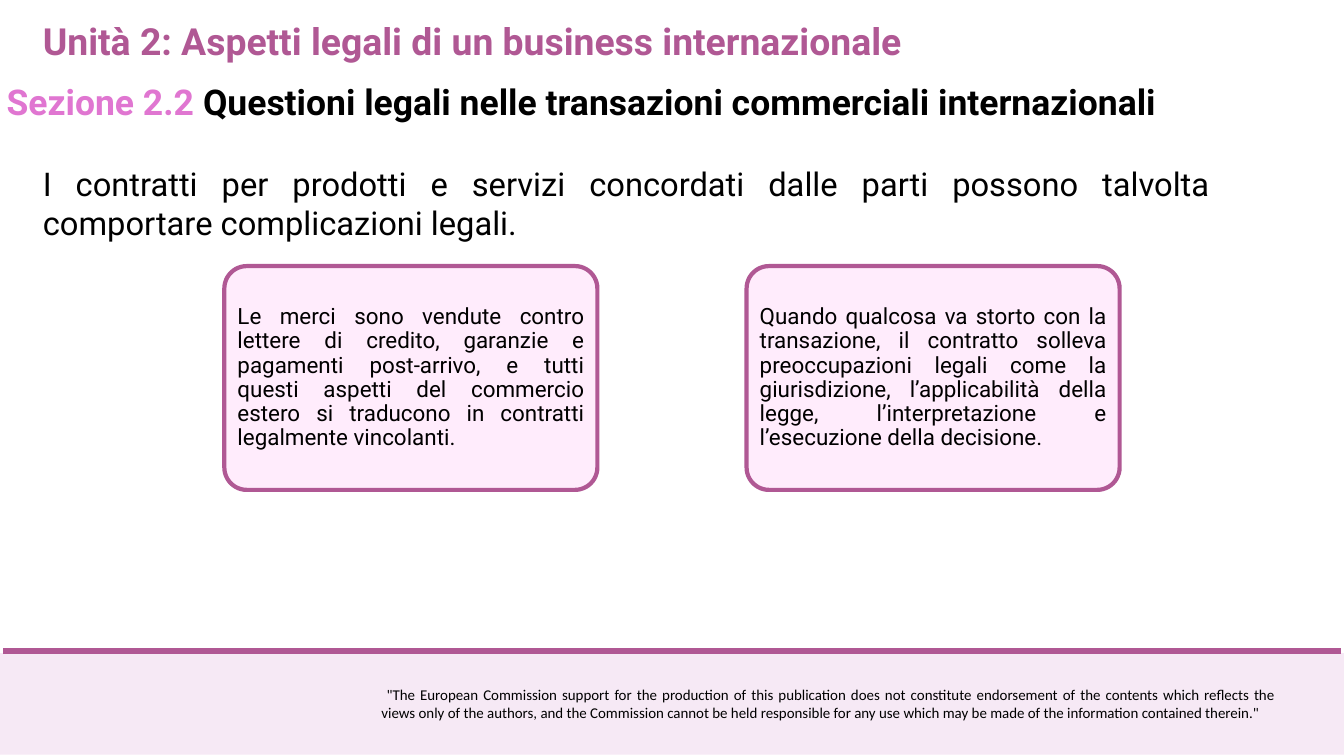
from lxml import etree
from pptx import Presentation
from pptx import util as u
from pptx.dml.color import RGBColor
from pptx.enum import shapes, text
from pptx.oxml.ns import qn

PURPLE, PINK, BLACK = "B05894", "E076D1", "000000"
BAND, CARD = "F6E9F5", "FFECFC"
JUSTIFY = text.PP_ALIGN.JUSTIFY

TITLE = "Unità 2: Aspetti legali di un business internazionale"
SECTION = [("Sezione 2.2 ", PINK),
           ("Questioni legali nelle transazioni commerciali internazionali", BLACK)]
INTRO = ("I contratti per prodotti e servizi concordati dalle parti possono "
         "talvolta comportare complicazioni legali.")
CARDS = [
    "Le merci sono vendute contro lettere di credito, garanzie e pagamenti "
    "post-arrivo, e tutti questi aspetti del commercio estero si traducono in "
    "contratti legalmente vincolanti.",
    "Quando qualcosa va storto con la transazione, il contratto solleva "
    "preoccupazioni legali come la giurisdizione, l’applicabilità della legge, "
    "l’interpretazione e l’esecuzione della decisione.",
]
DISCLAIMER = (
    " \"The European Commission support for the production of this publication "
    "does not constitute endorsement of the contents which reflects the views "
    "only of the authors, and the Commission cannot be held responsible for any "
    "use which may be made of the information contained therein.\"")


def rgb(value):
    return RGBColor.from_string(value)


def add_block(slide, preset, box, fill, line=None, width=0):
    """Add a filled preset shape, with an outline only if a line colour is given."""
    block = slide.shapes.add_shape(preset, *map(u.Cm, box))
    block.shadow.inherit = False
    block.fill.solid()
    block.fill.fore_color.rgb = rgb(fill)
    if line:
        block.line.color.rgb = rgb(line)
        block.line.width = u.Pt(width)
    else:
        block.line.fill.background()
    return block


def write(paragraph, runs, size, font="Roboto", bold=False, align=None):
    """Fill a paragraph with (wording, colour) runs that share one font."""
    for wording, color in runs:
        run = paragraph.add_run()
        run.text = wording
        run.font.color.rgb = rgb(color)
    paragraph.font.size = u.Pt(size)
    paragraph.font.name = font
    paragraph.font.bold = bold
    paragraph.alignment = align


def add_text(slide, box, runs, size, **style):
    frame = slide.shapes.add_textbox(*map(u.Cm, box)).text_frame
    frame.word_wrap = True
    write(frame.paragraphs[0], runs, size, **style)


def add_card(slide, left, wording):
    card = add_block(slide, shapes.MSO_SHAPE.ROUNDED_RECTANGLE,
                     (left, 10.06, 14.1, 8.46), CARD, PURPLE, 4.5)
    card.adjustments[0] = 0.1
    frame = card.text_frame
    frame.word_wrap = True
    frame.vertical_anchor = text.MSO_ANCHOR.MIDDLE
    write(frame.paragraphs[0], [(wording, BLACK)], 24, align=JUSTIFY)
    frame.paragraphs[0].line_spacing = 0.9


def add_footer(slide):
    add_block(slide, shapes.MSO_SHAPE.RECTANGLE, (0, 24.69, 50.8, 3.84), BAND)
    rule = slide.shapes.add_connector(shapes.MSO_CONNECTOR.STRAIGHT, u.Cm(0.13),
                                      u.Cm(24.61), u.Cm(50.67), u.Cm(24.61))
    rule.line.color.rgb = rgb(PURPLE)
    rule.line.width = u.Pt(6.75)
    etree.SubElement(rule._element.spPr, qn("a:effectLst"))
    add_text(slide, (14.17, 25.78, 34.29, 1.63), [(DISCLAIMER, BLACK)], 16,
             font="Calibri", align=JUSTIFY)


def main():
    deck = Presentation()
    deck.slide_width, deck.slide_height = u.Cm(50.8), u.Cm(28.58)
    slide = deck.slides.add_slide(deck.slide_layouts[6])
    add_footer(slide)
    add_text(slide, (1.37, 0.56, 39.67, 1.96), [(TITLE, PURPLE)], 40, bold=True)
    add_text(slide, (0, 2.9, 50.7, 1.88), SECTION, 38, bold=True)
    add_text(slide, (1.37, 6.07, 44.65, 7.52), [(INTRO, BLACK)], 35, align=JUSTIFY)
    for column, wording in enumerate(CARDS):
        add_card(slide, 8.48 + 19.74 * column, wording)
    deck.save("out.pptx")


if __name__ == "__main__":
    main()
